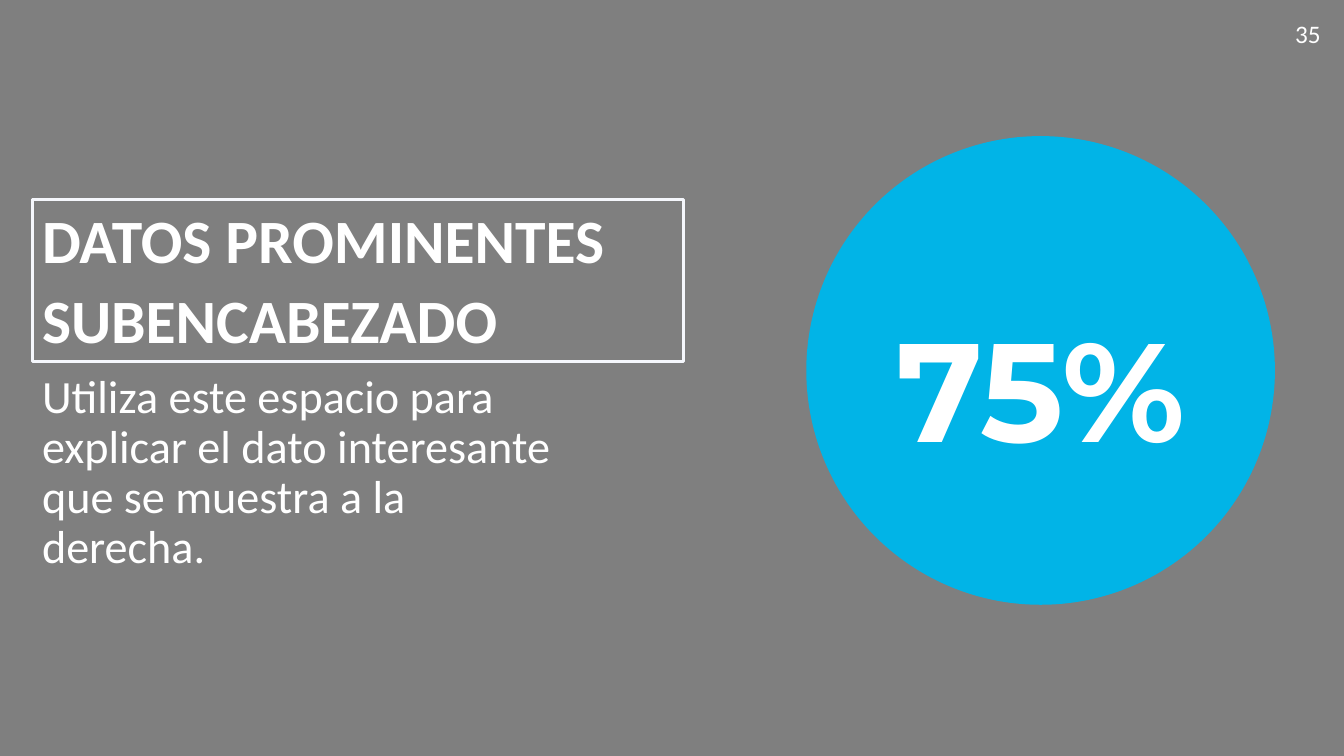
from dataclasses import dataclass

from pptx import Presentation
from pptx import util as u
from pptx.dml.color import RGBColor
from pptx.enum import shapes, text
from pptx.slide import Slide

COLORS = {
    "backdrop": "7F7F7F",
    "circle": "01B4E7",
    "frame": "F5F7FC",
    "text": "FFFFFF",
}
SLIDE_WIDTH, SLIDE_HEIGHT = 33.87, 19.05
LEFT_MARGIN = 0.81
CIRCLE_LEFT, CIRCLE_TOP, CIRCLE_SIZE = 20.32, 3.43, 11.81


@dataclass(frozen=True)
class Box:
    left: float
    top: float
    width: float
    height: float

    def lengths(self) -> tuple[u.Length, ...]:
        return tuple(u.Cm(side) for side in (self.left, self.top, self.width, self.height))


@dataclass(frozen=True)
class Panel:
    box: Box
    preset: shapes.MSO_SHAPE
    color: str


@dataclass(frozen=True)
class Label:
    box: Box
    wording: str
    size: int
    font: str = "Calibri"
    bold: bool = False
    align: text.PP_ALIGN = text.PP_ALIGN.LEFT
    anchor: text.MSO_ANCHOR = text.MSO_ANCHOR.TOP
    line_spacing: float = 1.0
    paragraph_gap: int = 0
    frame: str | None = None


PANELS = [
    Panel(Box(0, 0, SLIDE_WIDTH, SLIDE_HEIGHT), shapes.MSO_SHAPE.RECTANGLE, "backdrop"),
    Panel(Box(CIRCLE_LEFT, CIRCLE_TOP, CIRCLE_SIZE, CIRCLE_SIZE), shapes.MSO_SHAPE.OVAL, "circle"),
]
LABELS = [
    Label(
        Box(LEFT_MARGIN, 9.3, 13.84, 5.49),
        "Utiliza este espacio para explicar el dato interesante que se muestra a la derecha.",
        33,
        line_spacing=0.9,
    ),
    Label(
        Box(LEFT_MARGIN, 5.03, 16.41, 4.09),
        "DATOS PROMINENTES\nSUBENCABEZADO",
        44,
        bold=True,
        anchor=text.MSO_ANCHOR.BOTTOM,
        line_spacing=0.9,
        paragraph_gap=10,
        frame="frame",
    ),
    Label(Box(32.36, 0.33, 1.17, 1.02), "35", 18, align=text.PP_ALIGN.RIGHT),
    Label(
        Box(CIRCLE_LEFT, 7.49, CIRCLE_SIZE, 4.52),
        "75%",
        100,
        font="Montserrat",
        bold=True,
        align=text.PP_ALIGN.CENTER,
    ),
]


def color(name: str) -> RGBColor:
    return RGBColor.from_string(COLORS[name])


def draw_panel(slide: Slide, panel: Panel) -> None:
    shape = slide.shapes.add_shape(panel.preset, *panel.box.lengths())
    shape.shadow.inherit = False
    shape.fill.solid()
    shape.fill.fore_color.rgb = color(panel.color)
    shape.line.fill.background()


def draw_label(slide: Slide, label: Label) -> None:
    shape = slide.shapes.add_textbox(*label.box.lengths())
    if label.frame:
        shape.line.color.rgb = color(label.frame)
        shape.line.width = u.Pt(2)
    text_frame = shape.text_frame
    text_frame.word_wrap = True
    text_frame.vertical_anchor = label.anchor
    text_frame.text = label.wording
    for index, paragraph in enumerate(text_frame.paragraphs):
        paragraph.alignment = label.align
        paragraph.line_spacing = label.line_spacing
        paragraph.space_before = u.Pt(label.paragraph_gap if index else 0)
        for run in paragraph.runs:
            run.font.name = label.font
            run.font.size = u.Pt(label.size)
            run.font.bold = label.bold
            run.font.color.rgb = color("text")


def main() -> None:
    presentation = Presentation()
    presentation.slide_width = u.Cm(SLIDE_WIDTH)
    presentation.slide_height = u.Cm(SLIDE_HEIGHT)
    slide = presentation.slides.add_slide(presentation.slide_layouts[6])
    for panel in PANELS:
        draw_panel(slide, panel)
    for label in LABELS:
        draw_label(slide, label)
    presentation.save("out.pptx")


if __name__ == "__main__":
    main()
